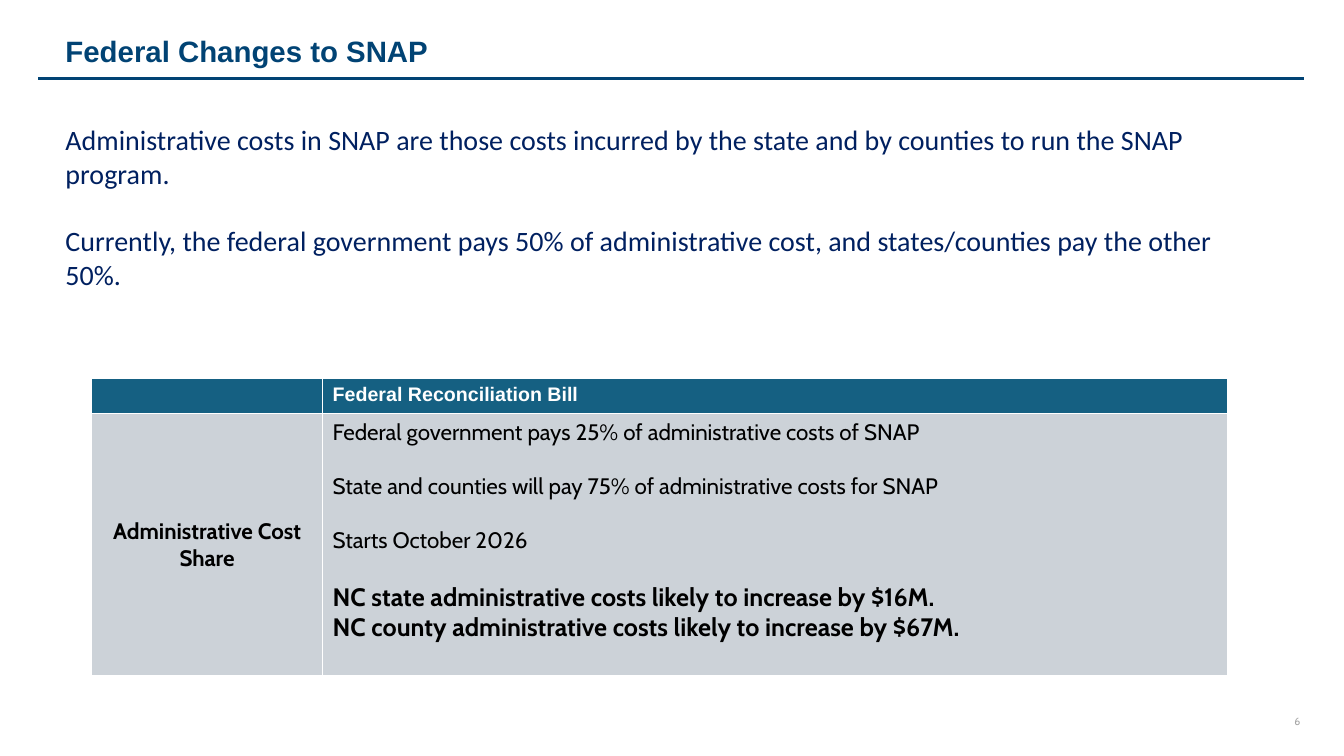
from lxml.etree import SubElement as Sub
from pptx import Presentation as Deck
from pptx.dml.color import RGBColor as Rgb
from pptx.enum.shapes import MSO_CONNECTOR as Link
from pptx.enum.text import MSO_ANCHOR as Anchor, PP_ALIGN as Align
from pptx.oxml import parse_xml
from pptx.oxml.ns import qn
from pptx.util import Cm, Pt

HUE = {"title": "014374", "body": "002060", "head": "156082", "cell": "CCD2D8",
       "white": "FFFFFF", "black": "000000", "grey": "A6A6A6"}
BODY = [
    "Administrative costs in SNAP are those costs incurred by the state and by counties to run the SNAP program.",
    "Currently, the federal government pays 50% of administrative cost, and states/counties pay the other 50%.",
]
BILL = [
    ("Federal government pays 25% of administrative costs of SNAP", 16, False, 0),
    ("State and counties will pay 75% of administrative costs for SNAP", 16, False, 19.5),
    ("Starts October 2026", 16, False, 19.5),
    ("NC state administrative costs likely to increase by $16M.", 18, True, 19.5),
    ("NC county administrative costs likely to increase by $67M.", 18, True, 0),
]
NS = "http://schemas.openxmlformats.org/drawingml/2006/main"


def write(frame, lines, face, hue, align=Align.LEFT):
    frame.word_wrap = True
    for i, (text, size, bold, gap) in enumerate(lines):
        para = frame.add_paragraph() if i else frame.paragraphs[0]
        para.text = text
        para.alignment = align
        para.space_before = Pt(gap)
        font = para.font
        font.name, font.size, font.bold = face, Pt(size), bold
        font.color.rgb = Rgb.from_string(HUE[hue])


def add_text(slide, box, lines, face, hue, align=Align.LEFT):
    frame = slide.shapes.add_textbox(*map(Cm, box)).text_frame
    write(frame, lines, face, hue, align)
    return frame


def add_title(slide, left, top, width):
    frame = add_text(slide, (left + 0.43, top, 25.45, 1.65),
                     [("Federal Changes to SNAP", 21, True, 0)], "Arial", "title")
    frame.margin_top = 0
    frame.paragraphs[0].line_spacing = 0.9
    y = Cm(top + 1.04)
    rule = slide.shapes.add_connector(Link.STRAIGHT, Cm(left), y, Cm(left + width), y)
    rule.line.color.rgb = Rgb.from_string(HUE["title"])
    rule.line.width = Pt(2.25)
    Sub(rule._element.spPr, qn("a:effectLst"))


def paint(cell, hue):
    cell.fill.solid()
    cell.fill.fore_color.rgb = Rgb.from_string(HUE[hue])
    for i, side in enumerate("LRTB"):
        edge = parse_xml(f'<a:ln{side} xmlns:a="{NS}" w="12700"><a:solidFill>'
                         f'<a:srgbClr val="{HUE["white"]}"/></a:solidFill></a:ln{side}>')
        cell._tc.get_or_add_tcPr().insert(i, edge)


def add_costs(slide, left, top, width, height):
    grid = slide.shapes.add_table(2, 2, Cm(left), Cm(top), Cm(width), Cm(height)).table
    side, head = 5.82, 0.89
    grid.columns[0].width, grid.columns[1].width = Cm(side), Cm(width - side)
    grid.rows[0].height, grid.rows[1].height = Cm(head), Cm(height - head)
    for row, hue in enumerate(("head", "cell")):
        for col in range(2):
            paint(grid.cell(row, col), hue)
    blank, label = grid.cell(0, 0), grid.cell(1, 0)
    blank.margin_top = blank.margin_bottom = 0
    write(grid.cell(0, 1).text_frame, [("Federal Reconciliation Bill", 14, True, 0)], "Arial", "white")
    label.vertical_anchor = Anchor.MIDDLE
    write(label.text_frame, [("Administrative Cost Share", 16, True, 0)], "Cabin", "black", Align.CENTER)
    write(grid.cell(1, 1).text_frame, BILL, "Cabin", "black")


def add_number(slide, *box):
    frame = add_text(slide, box, [("6", 7.5, False, 0)], "Cabin", "grey", Align.CENTER)
    frame.margin_left = frame.margin_right = frame.margin_top = frame.margin_bottom = 0
    frame.vertical_anchor = Anchor.MIDDLE


def main():
    deck = Deck()
    deck.slide_width, deck.slide_height = Cm(33.87), Cm(19.05)
    slide = deck.slides.add_slide(deck.slide_layouts[6])
    add_title(slide, 0.97, 0.94, 31.88)
    add_text(slide, (1.4, 2.97, 30.58, 4.52),
             [(text, 20, False, 24 * i) for i, text in enumerate(BODY)], "Calibri", "body")
    add_costs(slide, 2.31, 9.53, 28.63, 7.5)
    add_number(slide, 32.11, 18.01, 1.17, 0.33)
    deck.save("out.pptx")


if __name__ == "__main__":
    main()
